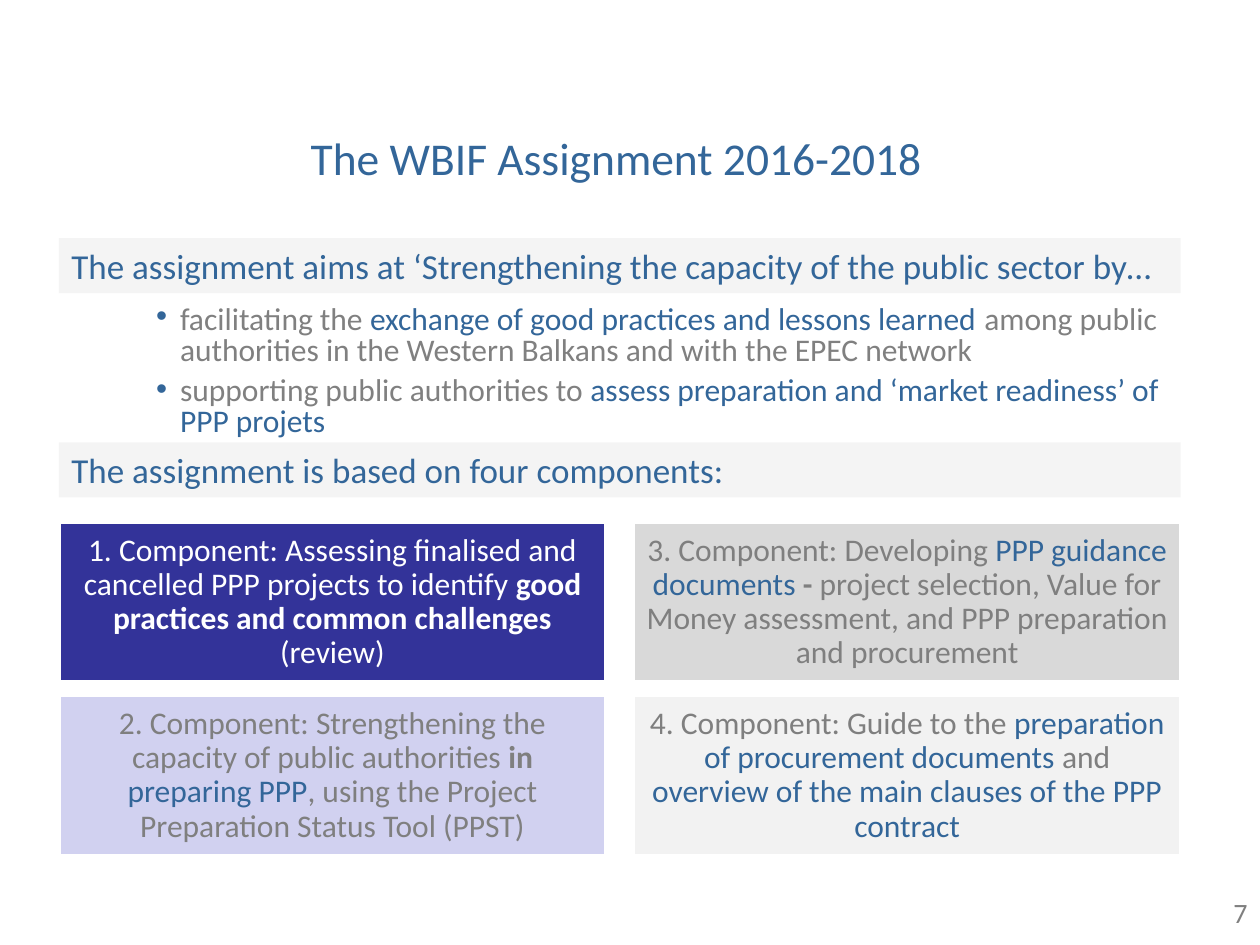
from dataclasses import dataclass

from lxml.etree import SubElement
from pptx import Presentation
from pptx.dml.color import RGBColor
from pptx.enum.shapes import MSO_SHAPE
from pptx.enum.text import MSO_ANCHOR, PP_ALIGN
from pptx.oxml.ns import qn
from pptx.util import Cm, Pt


@dataclass(frozen=True)
class Theme:
    font: str = "Calibri"
    blue: str = "336699"
    grey: str = "808080"
    mid_grey: str = "7F7F7F"
    white: str = "FFFFFF"
    banner: str = "EAEAEA"
    navy: str = "333399"
    lavender: str = "D1D1F0"
    silver: str = "D9D9D9"
    pale: str = "F2F2F2"
    title_size: int = 26
    banner_size: int = 20
    body_size: int = 18
    number_size: int = 16


THEME = Theme()

AIMS = [
    [("facilitating the ", THEME.grey),
     ("exchange of good practices and lessons learned", THEME.blue),
     (" ", THEME.blue, False, THEME.banner_size),
     ("among public authorities in the Western Balkans and with the EPEC network", THEME.grey)],
    [("supporting public authorities to ", THEME.grey),
     ("assess preparation and ‘market readiness’ of PPP projets", THEME.blue)],
]

COMPONENTS = [
    (THEME.navy, [
        ("1. Component: Assessing finalised and cancelled PPP projects to identify ", THEME.white),
        ("good practices and common challenges", THEME.white, True),
        (" (review)", THEME.white)]),
    (THEME.lavender, [
        ("2. Component: Strengthening the capacity of public authorities ", THEME.mid_grey),
        ("in ", THEME.mid_grey, True),
        ("preparing PPP", THEME.blue),
        (", using the Project Preparation Status Tool (PPST)", THEME.mid_grey)]),
    (THEME.silver, [
        ("3. Component: Developing", THEME.mid_grey),
        (" PPP guidance documents ", THEME.blue),
        ("-", THEME.mid_grey, True),
        (" project selection, Value for Money assessment, and PPP preparation and procurement",
         THEME.mid_grey)]),
    (THEME.pale, [
        ("4. Component: Guide to the ", THEME.mid_grey),
        ("preparation of procurement documents ", THEME.blue),
        ("and ", THEME.mid_grey),
        ("overview of the main clauses of the PPP contract", THEME.blue)]),
]


def add_run(paragraph, text, color, bold=False, size=THEME.body_size):
    run = paragraph.add_run()
    run.text = text
    run.font.name = THEME.font
    run.font.size = Pt(size)
    run.font.bold = bold
    run.font.color.rgb = RGBColor.from_string(color)


def add_panel(slide, box, color):
    panel = slide.shapes.add_shape(MSO_SHAPE.RECTANGLE, *map(Cm, box))
    panel.shadow.inherit = False
    panel.fill.solid()
    panel.fill.fore_color.rgb = RGBColor.from_string(color)
    panel.text_frame.word_wrap = True
    return panel


def add_title(slide, box, text):
    title = slide.shapes.title
    title.left, title.top, title.width, title.height = map(Cm, box)
    title.text_frame.vertical_anchor = MSO_ANCHOR.TOP
    heading = title.text_frame.paragraphs[0]
    heading.alignment = PP_ALIGN.CENTER
    add_run(heading, text, THEME.blue, size=THEME.title_size)


def add_banner(slide, box, text):
    banner = add_panel(slide, box, THEME.banner)
    banner.line.fill.background()
    tint = banner.fill._xPr.find(qn("a:solidFill"))[0]
    SubElement(tint, qn("a:alpha"), val="48000")
    banner.text_frame.vertical_anchor = MSO_ANCHOR.TOP
    statement = banner.text_frame.paragraphs[0]
    statement.alignment = PP_ALIGN.LEFT
    add_run(statement, text, THEME.blue, size=THEME.banner_size)


def add_bullet(paragraph):
    properties = paragraph._p.get_or_add_pPr()
    properties.set("marL", str(Cm(1.27)))
    properties.set("indent", str(Cm(-0.48)))
    bullet_color = SubElement(properties, qn("a:buClr"))
    SubElement(bullet_color, qn("a:srgbClr"), val=THEME.blue)
    SubElement(properties, qn("a:buFont"), typeface="Arial")
    SubElement(properties, qn("a:buChar"), char="•")


def add_aims(slide, box, aims):
    frame = slide.shapes.add_textbox(*map(Cm, box)).text_frame
    frame.word_wrap = True
    for index, runs in enumerate(aims):
        aim = frame.add_paragraph() if index else frame.paragraphs[0]
        add_bullet(aim)
        aim.level = 1
        aim.line_spacing = 0.8
        aim.space_after = Pt(6)
        for run in runs:
            add_run(aim, *run)


def add_component(slide, box, color, runs):
    card = add_panel(slide, box, color)
    card.line.color.rgb = RGBColor.from_string(THEME.white)
    card.line.width = Pt(2)
    frame = card.text_frame
    frame.vertical_anchor = MSO_ANCHOR.MIDDLE
    frame.margin_left = frame.margin_right = Cm(0.18)
    frame.margin_top = frame.margin_bottom = Cm(0.18)
    description = frame.paragraphs[0]
    description.alignment = PP_ALIGN.CENTER
    description.line_spacing = 0.9
    for run in runs:
        add_run(description, *run)


def add_component_grid(slide, box, components):
    left, top, width, height = box
    column_gap, row_gap = 0.56, 0.28
    card_width = (width - column_gap) / 2
    card_height = (height - row_gap) / 2
    for index, (color, runs) in enumerate(components):
        column, row = divmod(index, 2)
        card_box = (left + column * (card_width + column_gap),
                    top + row * (card_height + row_gap),
                    card_width, card_height)
        add_component(slide, card_box, color, runs)


def add_page_number(slide, box, number):
    frame = slide.shapes.add_textbox(*map(Cm, box)).text_frame
    frame.word_wrap = True
    page = frame.paragraphs[0]
    page.alignment = PP_ALIGN.RIGHT
    add_run(page, number, THEME.grey, size=THEME.number_size)


def main():
    deck = Presentation()
    deck.slide_width, deck.slide_height = Cm(25.4), Cm(19.05)
    slide = deck.slides.add_slide(deck.slide_layouts[5])
    left, width = 1.19, 22.61
    add_title(slide, (1.09, 2.49, 22.68, 1.6), "The WBIF Assignment 2016-2018")
    add_banner(slide, (left, 4.8, width, 1.11),
               "The assignment aims at ‘Strengthening the capacity of the public sector by…")
    add_banner(slide, (left, 8.92, width, 1.11), "The assignment is based on four components:")
    add_aims(slide, (2.11, 5.99, 22, 3), AIMS)
    add_component_grid(slide, (left, 10.52, width, 6.73), COMPONENTS)
    add_page_number(slide, (19.1, 17.93, 6.3, 1.12), "7")
    deck.save("out.pptx")


if __name__ == "__main__":
    main()
